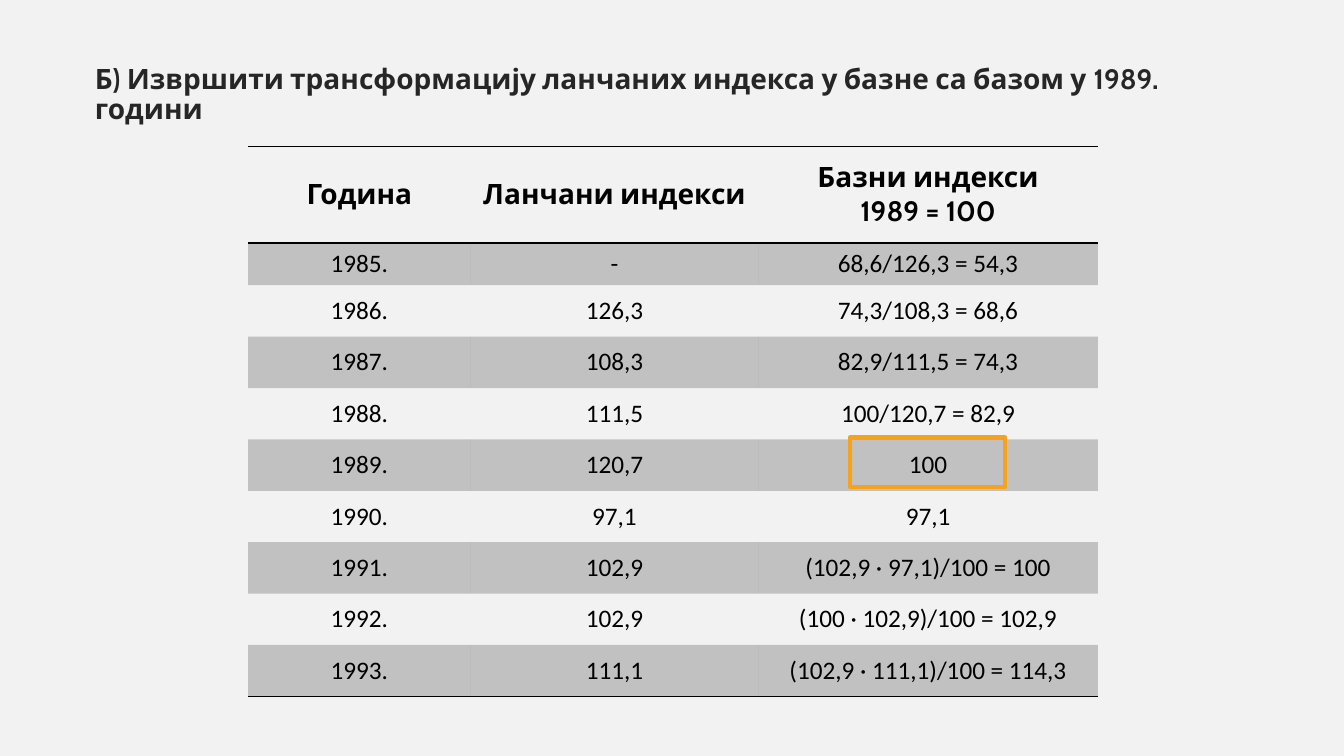
from dataclasses import dataclass
from typing import NamedTuple

from lxml.etree import SubElement
from pptx import Presentation
from pptx.dml.color import RGBColor
from pptx.enum.shapes import MSO_SHAPE as Shape
from pptx.enum.text import MSO_ANCHOR as Anchor, MSO_AUTO_SIZE as AutoSize, PP_ALIGN as Align
from pptx.oxml.ns import qn
from pptx.util import Inches, Pt


@dataclass(frozen=True)
class Theme:
    page: RGBColor = RGBColor(0xF2, 0xF2, 0xF2)
    heading: RGBColor = RGBColor(0x26, 0x26, 0x26)
    ink: RGBColor = RGBColor(0, 0, 0)
    accent: RGBColor = RGBColor(0xF6, 0xA2, 0x1D)
    heading_font: str = "Cabin"
    body_font: str = "Calibri"
    heading_size: Pt = Pt(20)
    body_size: Pt = Pt(18)
    band_alpha: int = 20000


class Frame(NamedTuple):
    left: float
    top: float
    width: float
    height: float

    def lengths(self) -> list:
        return [Inches(value) for value in self]


class IndexRow(NamedTuple):
    year: str
    chain: str
    base: str


THEME = Theme()
NO_STYLE = "{2D5ABB26-0587-4C30-8999-92F81FD0307C}"
HEADING = "Б) Извршити трансформацију ланчаних индекса у базне са базом у 1989. години"
HEADING_FRAME = Frame(0.84, 0.6, 11.65, 6.3)
TABLE_FRAME = Frame(2.46, 1.45, 8.42, 5.45)
BASE_YEAR_FRAME = Frame(8.43, 4.34, 1.54, 0.49)
COLUMN_WIDTHS = [2.21, 2.85, 3.37]
ROWS = [
    IndexRow("Година", "Ланчани индекси", "Базни индекси\n1989 = 100"),
    IndexRow("1985.", "-", "68,6/126,3 = 54,3"),
    IndexRow("1986.", "126,3", "74,3/108,3 = 68,6"),
    IndexRow("1987.", "108,3", "82,9/111,5 = 74,3"),
    IndexRow("1988.", "111,5", "100/120,7 = 82,9"),
    IndexRow("1989.", "120,7", "100"),
    IndexRow("1990.", "97,1", "97,1"),
    IndexRow("1991.", "102,9", "(102,9 · 97,1)/100 = 100"),
    IndexRow("1992.", "102,9", "(100 · 102,9)/100 = 102,9"),
    IndexRow("1993.", "111,1", "(102,9 · 111,1)/100 = 114,3"),
]
ROW_HEIGHTS = [0.96, 0.42] + [0.51] * (len(ROWS) - 2)


def style_font(para, name: str, size: Pt, color: RGBColor, bold: bool) -> None:
    para.font.name = name
    para.font.size = size
    para.font.bold = bold
    para.font.color.rgb = color


def add_heading(page) -> None:
    title = page.shapes.title.element
    title.getparent().remove(title)
    body = page.placeholders[1]
    body.left, body.top, body.width, body.height = HEADING_FRAME.lengths()
    frame = body.text_frame
    frame.text = HEADING
    frame.auto_size = AutoSize.NONE
    frame.vertical_anchor = Anchor.TOP
    para = frame.paragraphs[0]
    para.alignment = Align.LEFT
    para.line_spacing = 0.9
    para.space_before = Pt(0)
    properties = para.runs[0].font._element.getparent().getparent().get_or_add_pPr()
    properties.set("marL", "0")
    properties.set("indent", "0")
    SubElement(properties, qn("a:buNone"))
    style_font(para, THEME.heading_font, THEME.heading_size, THEME.heading, True)


def add_border(properties, tag: str, position: int) -> None:
    line = SubElement(properties, qn(tag), w=str(Pt(1)))
    fill = SubElement(line, qn("a:solidFill"))
    SubElement(fill, qn("a:srgbClr"), val=str(THEME.ink))
    properties.insert(position, line)


def fill_cell(cell, properties, row: int, text: str) -> None:
    header = row == 0
    cell.text = text
    cell.vertical_anchor = Anchor.MIDDLE
    for para in cell.text_frame.paragraphs:
        para.alignment = Align.CENTER
        name = THEME.heading_font if header else THEME.body_font
        size = THEME.heading_size if header else THEME.body_size
        style_font(para, name, size, THEME.ink, header)
    if row % 2:
        cell.fill.solid()
        cell.fill.fore_color.rgb = THEME.ink
        color = properties.find(".//" + qn("a:srgbClr"))
        SubElement(color, qn("a:alpha"), val=str(THEME.band_alpha))
    else:
        cell.fill.background()
    if header or row == len(ROWS) - 1:
        add_border(properties, "a:lnB", 0)
    if header:
        add_border(properties, "a:lnT", 0)


def add_index_table(page) -> None:
    holder = page.shapes.add_table(len(ROWS), len(COLUMN_WIDTHS), *TABLE_FRAME.lengths())
    table = holder.table
    table.first_row = table.horz_banding = False
    next(holder.element.iter(qn("a:tableStyleId"))).text = NO_STYLE
    for column, width in zip(table.columns, COLUMN_WIDTHS):
        column.width = Inches(width)
    for row, height in zip(table.rows, ROW_HEIGHTS):
        row.height = Inches(height)
    cell_elements = list(holder.element.iter(qn("a:tc")))
    for row, texts in enumerate(ROWS):
        for column, text in enumerate(texts):
            element = cell_elements[row * len(COLUMN_WIDTHS) + column]
            fill_cell(table.cell(row, column), element.get_or_add_tcPr(), row, text)


def add_base_year_marker(page) -> None:
    box = page.shapes.add_shape(Shape.RECTANGLE, *BASE_YEAR_FRAME.lengths())
    box.shadow.inherit = False
    box.fill.background()
    box.line.color.rgb = THEME.accent
    box.line.width = Pt(3)


def main() -> None:
    deck = Presentation()
    deck.slide_width, deck.slide_height = Inches(13.33), Inches(7.5)
    page = deck.slides.add_slide(deck.slide_layouts[1])
    page.background.fill.solid()
    page.background.fill.fore_color.rgb = THEME.page
    add_heading(page)
    add_index_table(page)
    add_base_year_marker(page)
    deck.save("out.pptx")


if __name__ == "__main__":
    main()
